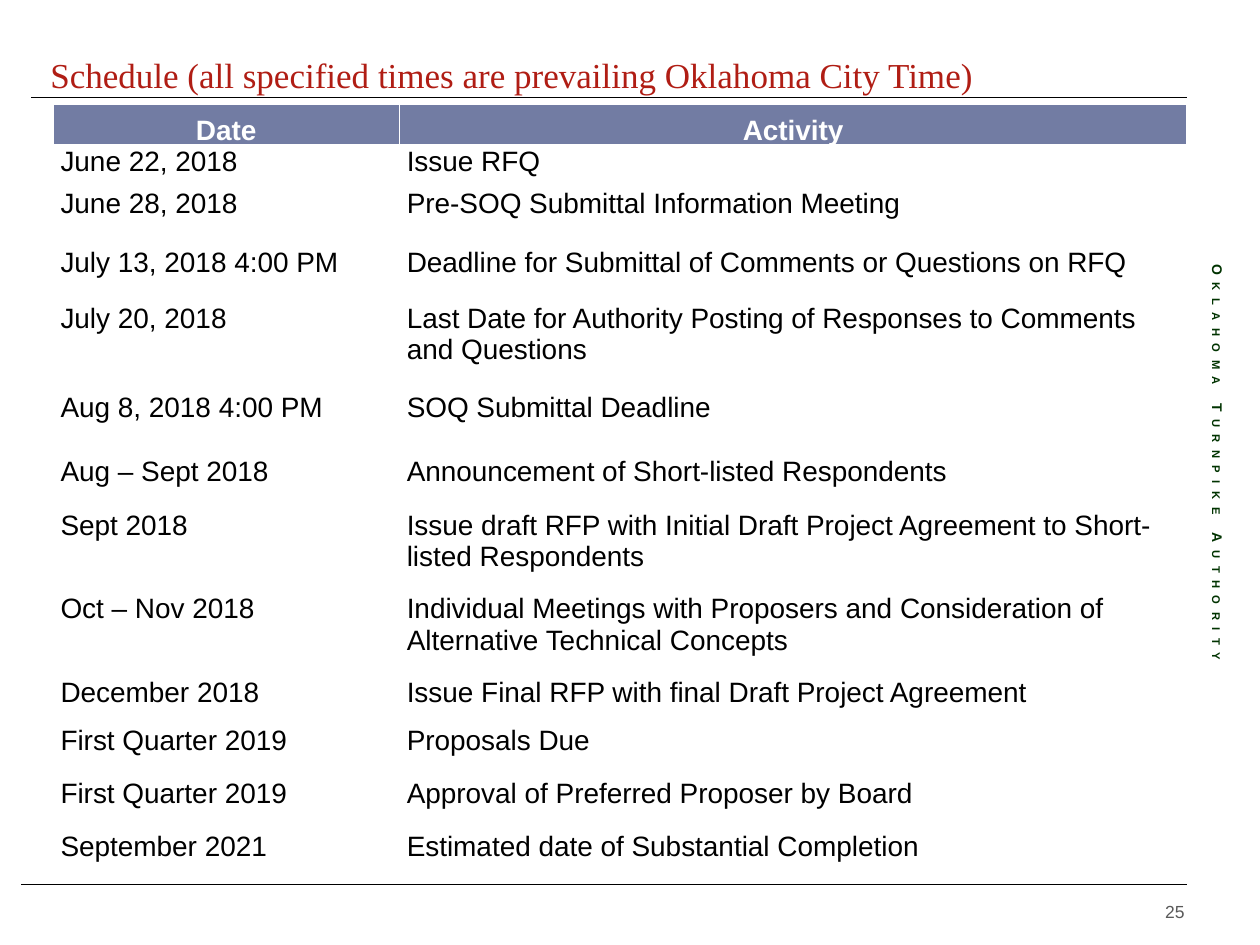
from lxml import etree
from pptx import Presentation
from pptx import util as u
from pptx.dml import color
from pptx.enum import shapes, text
from pptx.oxml import ns

COLORS = {
    "title": "B01D14",
    "header": "727CA3",
    "white": "FFFFFF",
    "black": "000000",
    "authority": "003300",
    "number": "595959",
}

SCHEDULE = [
    (0.84, "Date", "Activity"),
    (0.84, "June 22, 2018", "Issue RFQ"),
    (1.19, "June 28, 2018", "Pre-SOQ Submittal Information Meeting"),
    (1.14, "July 13, 2018 4:00 PM", "Deadline for Submittal of Comments or Questions on RFQ"),
    (1.78, "July 20, 2018",
     "Last Date for Authority Posting of Responses to Comments and Questions"),
    (1.3, "Aug 8, 2018 4:00 PM", "SOQ Submittal Deadline"),
    (1.09, "Aug – Sept 2018", "Announcement of Short-listed Respondents"),
    (1.68, "Sept 2018",
     "Issue draft RFP with Initial Draft Project Agreement to Short-listed Respondents"),
    (1.68, "Oct – Nov 2018",
     "Individual Meetings with Proposers and Consideration of Alternative Technical Concepts"),
    (0.97, "December 2018", "Issue Final RFP with final Draft Project Agreement"),
    (1.07, "First Quarter 2019", "Proposals Due"),
    (1.07, "First Quarter 2019", "Approval of Preferred Proposer by Board"),
    (0.97, "September 2021", "Estimated date of Substantial Completion"),
]


def rgb(name):
    return color.RGBColor.from_string(COLORS[name])


def style(para, font, size, shade, align, bold=False):
    para.alignment = align
    para.font.name = font
    para.font.size = u.Pt(size)
    para.font.bold = bold
    para.font.color.rgb = rgb(shade)


def add_title(page, left, top, width, height):
    box = page.shapes.title
    box.left, box.top, box.width, box.height = map(u.Cm, (left, top, width, height))
    frame = box.text_frame
    frame.text = "Schedule (all specified times are prevailing Oklahoma City Time)"
    frame.auto_size = text.MSO_AUTO_SIZE.NONE
    frame.vertical_anchor = text.MSO_ANCHOR.TOP
    frame.margin_top = u.Cm(0.24)
    frame.margin_bottom = 0
    style(frame.paragraphs[0], "Times New Roman", 20, "title", text.PP_ALIGN.LEFT)


def add_rule(page, left, top, right):
    rule = page.shapes.add_connector(
        shapes.MSO_CONNECTOR.STRAIGHT, u.Cm(left), u.Cm(top), u.Cm(right), u.Cm(top))
    rule.line.color.rgb = rgb("black")
    rule.line.width = u.Pt(0.25)
    etree.SubElement(rule._element.spPr, ns.qn("a:effectLst"))


def add_label(page, left, top, width, height, words):
    box = page.shapes.add_textbox(*map(u.Cm, (left, top, width, height)))
    frame = box.text_frame
    frame.word_wrap = True
    frame.vertical_anchor = text.MSO_ANCHOR.MIDDLE
    frame.text = words
    return frame


def add_authority(page, left, top, width, height):
    frame = add_label(page, left, top, width, height, "Oklahoma Turnpike Authority")
    frame._txBody.bodyPr.set("vert", "vert")
    para = frame.paragraphs[0]
    para._p.get_or_add_pPr().set("marL", str(u.Cm(2.34)))
    style(para, "Arial", 8, "authority", text.PP_ALIGN.LEFT, True)
    properties = para.runs[0]._r.get_or_add_rPr()
    properties.set("cap", "small")
    properties.set("spc", "430")


def add_number(page, left, top, width, height):
    frame = add_label(page, left, top, width, height, "25")
    style(frame.paragraphs[0], "Arial", 10, "number", text.PP_ALIGN.RIGHT)


def add_borders(cell):
    properties = cell._tc.get_or_add_tcPr()
    for side, width in (("L", 1), ("R", 1), ("T", 1), ("B", 3)):
        line = etree.SubElement(properties, ns.qn(f"a:ln{side}"), w=str(u.Pt(width)))
        fill = etree.SubElement(line, ns.qn("a:solidFill"))
        etree.SubElement(fill, ns.qn("a:srgbClr"), val=COLORS["white"])


def fill_cell(cell, words, is_header):
    cell.margin_left = cell.margin_right = u.Cm(0.15)
    cell.margin_top = cell.margin_bottom = 0
    cell.text = words
    para = cell.text_frame.paragraphs[0]
    if is_header:
        add_borders(cell)
        cell.fill.solid()
        cell.fill.fore_color.rgb = rgb("header")
        cell.vertical_anchor = text.MSO_ANCHOR.BOTTOM
        style(para, "Arial", 16, "white", text.PP_ALIGN.CENTER, True)
    else:
        cell.fill.background()
        cell.vertical_anchor = text.MSO_ANCHOR.TOP
        style(para, "Arial", 16, "black", text.PP_ALIGN.LEFT)


def add_schedule(page, left, top, width, height):
    table = page.shapes.add_table(
        len(SCHEDULE), 2, *map(u.Cm, (left, top, width, height))).table
    table.horz_banding = False
    date_width = 6.98
    table.columns[0].width = u.Cm(date_width)
    table.columns[1].width = u.Cm(width - date_width)
    for index, (row_height, *entries) in enumerate(SCHEDULE):
        table.rows[index].height = u.Cm(row_height)
        for column, words in enumerate(entries):
            fill_cell(table.cell(index, column), words, index == 0)


def main():
    deck = Presentation()
    deck.slide_width, deck.slide_height = u.Cm(25.4), u.Cm(19.05)
    page = deck.slides.add_slide(deck.slide_layouts[5])
    add_rule(page, 0.43, 17.83, 23.93)
    add_rule(page, 0.63, 1.96, 23.93)
    add_authority(page, 23.7, 2.74, 1.7, 14.81)
    add_title(page, 0.76, 0.84, 22.86, 1.04)
    add_number(page, 22.76, 17.86, 1.37, 1.02)
    add_schedule(page, 1.07, 2.11, 22.86, 15.57)
    deck.save("out.pptx")


if __name__ == "__main__":
    main()
